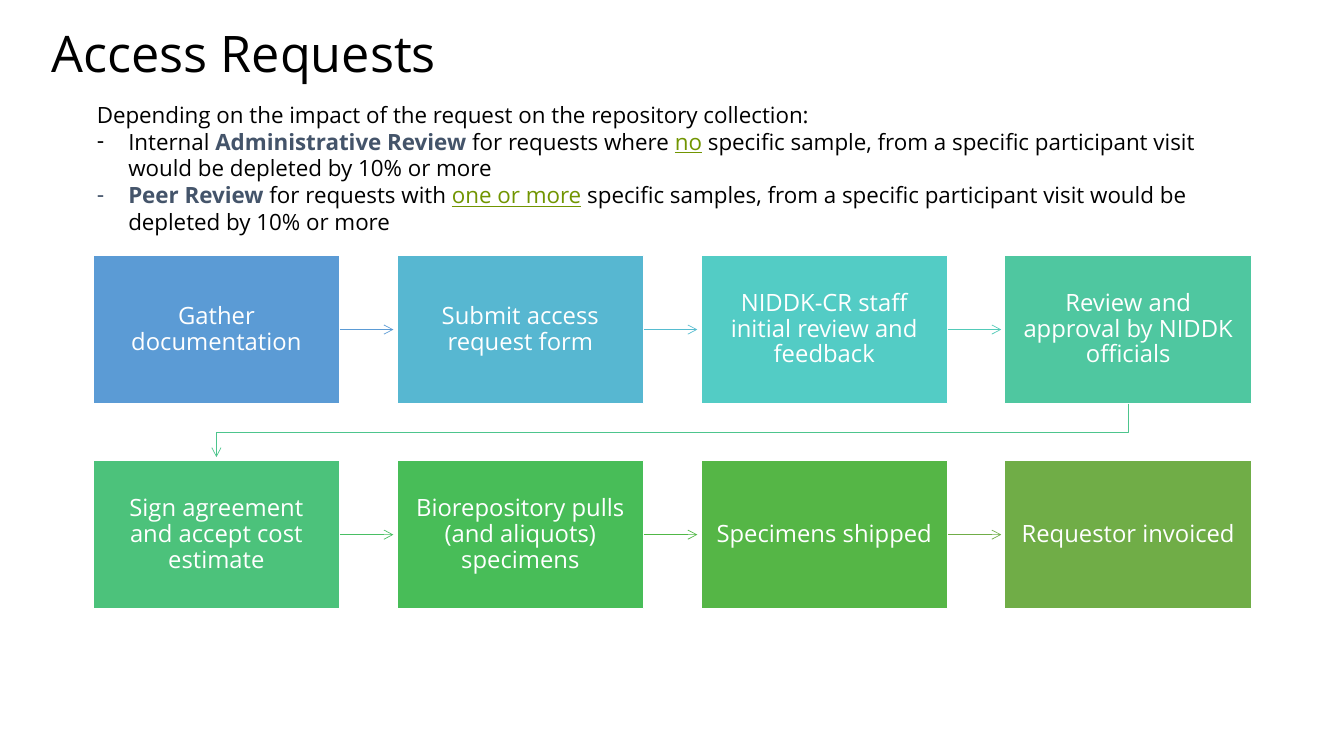
from lxml.etree import SubElement
from pptx import Presentation
from pptx.dml.color import RGBColor
from pptx.enum.shapes import MSO_CONNECTOR as Connector, MSO_SHAPE as Shape
from pptx.enum.text import MSO_ANCHOR as Anchor, MSO_AUTO_SIZE as AutoSize, PP_ALIGN as Align
from pptx.oxml.ns import qn
from pptx.util import Pt

# Content
FONT = "Open Sans"
COLORS = {"black": "000000", "white": "FFFFFF", "slate": "44546A", "green": "719501"}
TITLE = "Access Requests"
INTRO = [("Depending on the impact of the request on the repository collection:", "plain")]
REVIEWS = [
    [("Internal ", "plain"), ("Administrative Review ", "review"),
     ("for requests where ", "plain"), ("no", "limit"),
     (" specific sample, from a specific participant visit would be depleted by 10% or more", "plain")],
    [("Peer Review ", "review"), ("for requests with ", "plain"), ("one or more", "limit"),
     (" specific samples, from a specific participant visit would be depleted by 10% or more", "plain")],
]
STYLES = {  # color, bold, underline
    "plain": ("black", False, False),
    "review": ("slate", True, False),
    "limit": ("green", False, True),
}
STEPS = [  # label, box color, color of the arrow to the next step
    ("Gather documentation", "5B9BD5", "5B9BD5"),
    ("Submit access request form", "57B7D1", "56BCD0"),
    ("NIDDK-CR staff initial review and feedback", "53CCC5", "52CAB8"),
    ("Review and approval by NIDDK officials", "4FC7A0", "4DC58D"),
    ("Sign agreement and accept cost estimate", "4CC27B", "49BF64"),
    ("Biorepository pulls (and aliquots) specimens", "48BD58", "50B846"),
    ("Specimens shipped", "55B646", "70AD47"),
    ("Requestor invoiced", "70AD47", None),
]

# Step grid, in points
COLUMNS = 4
LEFT, TOP = 66.4, 182.5
STEP_W, STEP_H = 176.4, 105.8
PITCH_X, PITCH_Y = 217.1, 146.5
ARROW_GAP = 2.5


def rgb(value):
    return RGBColor.from_string(value)


def add_run(paragraph, text, size, color, bold=False, underline=False):
    run = paragraph.add_run()
    run.text = text
    font = run.font
    font.name, font.size, font.bold, font.underline = FONT, Pt(size), bold, underline
    font.color.rgb = rgb(COLORS[color])


def place(part, left, top, width, height):
    part.left, part.top, part.width, part.height = Pt(left), Pt(top), Pt(width), Pt(height)


def step_position(index):
    row, column = divmod(index, COLUMNS)
    return LEFT + column * PITCH_X, TOP + row * PITCH_Y


def style_arrow(arrow, color):
    arrow.line.color.rgb = rgb(color)
    arrow.line.width = Pt(0.5)
    SubElement(arrow.line._get_or_add_ln(), qn("a:tailEnd"), type="arrow")


prs = Presentation()
prs.slide_width, prs.slide_height = Pt(960), Pt(540)
slide = prs.slides.add_slide(prs.slide_layouts[1])
shapes = slide.shapes

# Title
title = shapes.title
place(title, 29.5, 13, 857.5, 54.7)
title.text_frame.auto_size = AutoSize.NONE
title.text_frame.vertical_anchor = Anchor.MIDDLE
heading = title.text_frame.paragraphs[0]
heading.alignment, heading.line_spacing = Align.LEFT, 0.9
add_run(heading, TITLE, 36, "black")

# Review rules
rules = slide.placeholders[1]
place(rules, 61.9, 68.4, 810.7, 104.4)
rules.text_frame.auto_size = AutoSize.NONE
for number, parts in enumerate([INTRO] + REVIEWS):
    rule = rules.text_frame.add_paragraph() if number else rules.text_frame.paragraphs[0]
    props = rule._p.get_or_add_pPr()
    indent = Pt(22.5) if number else 0
    props.set("marL", str(indent))
    props.set("indent", str(-indent))
    rule.space_before = Pt(0)
    if number:
        SubElement(props, qn("a:buChar"), char="-")
    else:
        SubElement(props, qn("a:buNone"))
    for text, style in parts:
        add_run(rule, text, 16, *STYLES[style])

# Steps
for index, (label, color, arrow_color) in enumerate(STEPS):
    left, top = step_position(index)
    step = shapes.add_shape(Shape.RECTANGLE, Pt(left), Pt(top), Pt(STEP_W), Pt(STEP_H))
    step.shadow.inherit = False
    step.fill.solid()
    step.fill.fore_color.rgb = rgb(color)
    step.line.color.rgb = rgb(COLORS["white"])
    step.line.width = Pt(1)
    frame = step.text_frame
    frame.word_wrap, frame.vertical_anchor = True, Anchor.MIDDLE
    frame.margin_left = frame.margin_right = frame.margin_top = frame.margin_bottom = Pt(9.4)
    caption = frame.paragraphs[0]
    caption.alignment, caption.line_spacing = Align.CENTER, 0.9
    add_run(caption, label, 17, "white")

    # Arrow to the next step
    if arrow_color is None:
        continue
    next_left, next_top = step_position(index + 1)
    if next_top == top:
        middle = Pt(top + STEP_H / 2)
        arrow = shapes.add_connector(Connector.STRAIGHT, Pt(left + STEP_W), middle,
                                     Pt(next_left - ARROW_GAP), middle)
        arrow.begin_connect(step, 3)
        SubElement(arrow._element.spPr, qn("a:effectLst"))
    else:
        start_x, end_x = left + STEP_W / 2, next_left + STEP_W / 2
        bottom = top + STEP_H
        turn = (bottom + next_top) / 2
        outline = shapes.build_freeform(Pt(start_x), Pt(bottom))
        outline.add_line_segments(
            [(Pt(start_x), Pt(turn)), (Pt(end_x), Pt(turn)), (Pt(end_x), Pt(next_top - ARROW_GAP))],
            close=False)
        arrow = outline.convert_to_shape()
        arrow.fill.background()
        arrow.shadow.inherit = False
    style_arrow(arrow, arrow_color)

prs.save("out.pptx")
